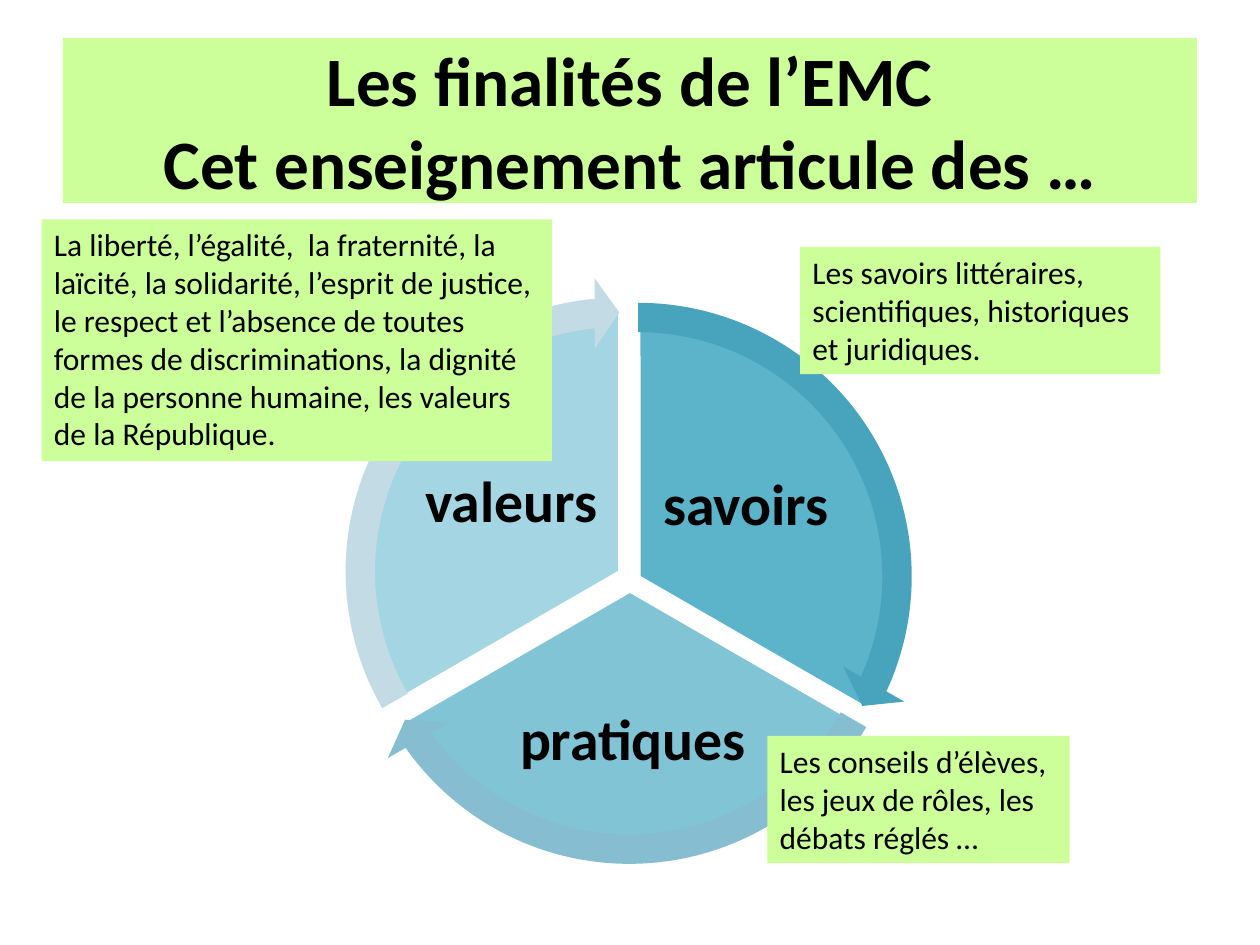
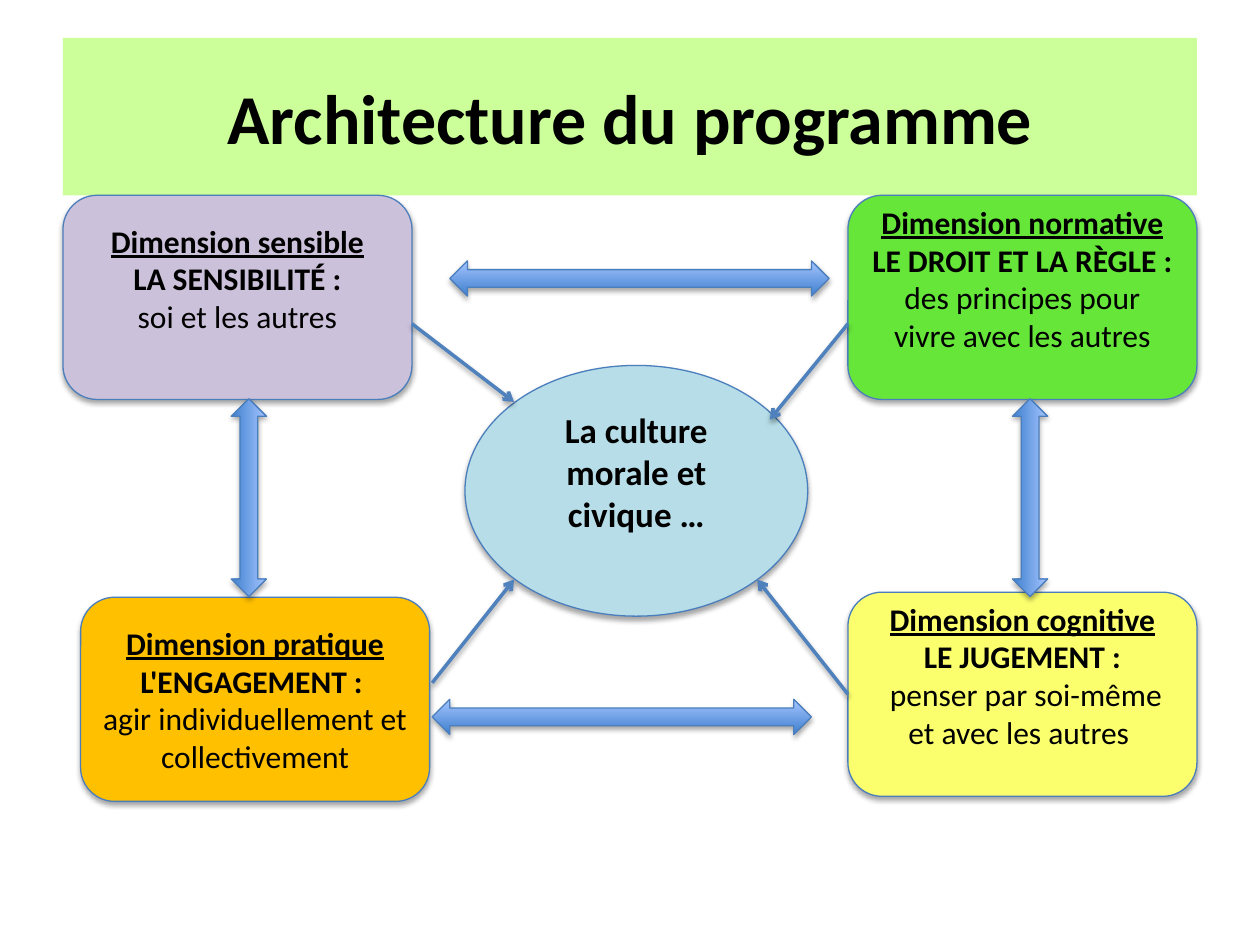
from lxml.etree import SubElement
from pptx import Presentation
from pptx.dml.color import RGBColor
from pptx.enum.shapes import MSO_CONNECTOR, MSO_SHAPE as Preset
from pptx.enum.text import MSO_ANCHOR as Anchor, PP_ALIGN as Align
from pptx.oxml.ns import qn
from pptx.util import Inches, Pt

BLACK = RGBColor(0x00, 0x00, 0x00)
WHITE = RGBColor(0xFF, 0xFF, 0xFF)
LIME = RGBColor(0xCC, 0xFF, 0x99)
TEAL = RGBColor(0x4B, 0xAC, 0xC6)
DEEP_TEAL = RGBColor(0x48, 0xA4, 0xBD)
MID_TEAL = RGBColor(0x86, 0xBD, 0xD0)
PALE_TEAL = RGBColor(0xC2, 0xDB, 0xE5)
LILAC = RGBColor(0xCC, 0xC1, 0xDA)
GREEN = RGBColor(0x67, 0xE6, 0x3A)
ORANGE = RGBColor(0xFF, 0xC0, 0x00)
YELLOW = RGBColor(0xFC, 0xFF, 0x6D)
SKY = RGBColor(0xB7, 0xDE, 0xE8)
OUTLINE = RGBColor(0x4B, 0x7E, 0xBC)
LINK_BLUE = RGBColor(0x4F, 0x81, 0xBD)
ARROW_DARK = RGBColor(0x3F, 0x80, 0xCE)
ARROW_LIGHT = RGBColor(0xA4, 0xC4, 0xFF)
FONT = "Calibri"

prs = Presentation()
prs.slide_width, prs.slide_height = Inches(10), Inches(7.5)
COL = prs.slide_width / 100
ROW = prs.slide_height / 75


def add_block(slide, preset, box, fill=None, outline=None, weight=0.75):
    """Draw a flat preset shape; box is left, top, width, height in grid units."""
    left, top, width, height = box
    block = slide.shapes.add_shape(
        preset, int(left * COL), int(top * ROW), int(width * COL), int(height * ROW))
    block.shadow.inherit = False
    if fill is None:
        block.fill.background()
    else:
        block.fill.solid()
        block.fill.fore_color.rgb = fill
    if outline is None:
        block.line.fill.background()
    else:
        block.line.color.rgb = outline
        block.line.width = Pt(weight)
    return block


def write(block, paragraphs, size, align=Align.CENTER, anchor=Anchor.MIDDLE):
    """Fill a block with paragraphs, each a list of (text, bold, underline) runs."""
    frame = block.text_frame
    frame.word_wrap = True
    frame.vertical_anchor = anchor
    for index, runs in enumerate(paragraphs):
        paragraph = frame.add_paragraph() if index else frame.paragraphs[0]
        paragraph.alignment = align
        for text, bold, underline in runs:
            for number, line in enumerate(text.split("\n")):
                if number:
                    paragraph.add_line_break()
                run = paragraph.add_run()
                run.text = line
                run.font.name, run.font.size = FONT, Pt(size)
                run.font.bold, run.font.underline = bold, underline
                run.font.color.rgb = BLACK
    return frame


# Title bands
slides = []
for title, size, height in [
    ("Les finalités de l’EMC\nCet enseignement articule des …", 39.6, 13.1),
    ("Architecture du programme", 40, 12.5),
]:
    slide = prs.slides.add_slide(prs.slide_layouts[6])
    band = add_block(slide, Preset.RECTANGLE, (5, 3, 90, height), LIME)
    write(band, [[(title, True, False)]], size)
    slides.append(slide)
purposes, programme = slides

# Slide 1: wheel of three sectors
for sector_box, angles, opacity, label, label_box in [
    ((29.9, 24.7, 41.6, 42.2), (162, 18), 90, "savoirs", (51.8, 33.6, 14.8, 12.6)),
    ((29.2, 26.1, 41.6, 41.6), (18, 90), 70, "pratiques", (39.1, 53.1, 22.3, 10.9)),
    ((28.4, 24.6, 41.6, 41.6), (90, 162), 50, "valeurs", (33.2, 33.4, 14.8, 12.4)),
]:
    sector = add_block(purposes, Preset.PIE, sector_box, TEAL, WHITE, 2)
    for index, angle in enumerate(angles):
        sector.adjustments[index] = angle
    colour = sector.element.spPr.find(qn("a:solidFill")).find(qn("a:srgbClr"))
    SubElement(colour, qn("a:alpha"), val=str(opacity * 1000))
    frame = write(add_block(purposes, Preset.RECTANGLE, label_box),
                  [[(label, True, False)]], 33)
    frame.margin_left = frame.margin_right = Inches(0.05)

for left, top, head_angle, start_angle, colour in [
    (27.3, 22.4, 14.73, 161.99, DEEP_TEAL),
    (26.6, 23.5, 86.72, 18, MID_TEAL),
    (25.8, 22, 158.73, 90, PALE_TEAL),
]:
    rim = add_block(purposes, Preset.CIRCULAR_ARROW, (left, top, 46.7, 46.7), colour)
    for index, value in enumerate((0.05, 3.28, head_angle, start_angle, 0.06)):
        rim.adjustments[index] = value

for note_box, note in [
    ((3.3, 17.4, 40.5, 19.2),
     "La liberté, l’égalité,  la fraternité, la laïcité, la solidarité, l’esprit de "
     "justice, le respect et l’absence de toutes formes de discriminations, la dignité "
     "de la personne humaine, les valeurs de la République."),
    ((63.5, 19.6, 28.6, 10.1),
     "Les savoirs littéraires, scientifiques, historiques et juridiques."),
    ((60.9, 58.4, 24, 10.1),
     "Les conseils d’élèves, les jeux de rôles, les débats réglés …"),
]:
    write(add_block(purposes, Preset.RECTANGLE, note_box, LIME),
          [[(note, False, False)]], 18, Align.LEFT, Anchor.TOP)

# Slide 2: four dimensions around a core
LIFT = Inches(0.35)
raised = []
dimensions = []
for left, top, colour, lifted, paragraphs in [
    (5, 15.5, LILAC, True, [
        [("Dimension sensible", True, True)],
        [("LA SENSIBILITÉ :", True, False)],
        [("soi et les autres", False, False)]]),
    (67.3, 15.5, GREEN, True, [
        [("Dimension normative", True, True)],
        [("LE DROIT ET LA RÈGLE : ", True, False),
         ("des principes pour vivre avec les autres", False, False)]]),
    (6.4, 47.4, ORANGE, False, [
        [("Dimension pratique", True, True)],
        [("L'ENGAGEMENT : ", True, False)],
        [("agir individuellement et collectivement", False, False)]]),
    (67.3, 47, YELLOW, True, [
        [("Dimension cognitive", True, True)],
        [("LE JUGEMENT :", True, False)],
        [(" penser par soi-même et avec les autres ", False, False)]]),
]:
    dimension = add_block(programme, Preset.FLOWCHART_ALTERNATE_PROCESS,
                          (left, top, 27.7, 16.2), colour, OUTLINE)
    frame = write(dimension, paragraphs, 18)
    if lifted:
        frame.margin_bottom = LIFT
    dimensions.append(dimension)
raised += dimensions

core = add_block(programme, Preset.OVAL, (36.9, 29, 27.2, 19.9), SKY, OUTLINE)
write(core, [[("La culture morale et civique …", True, False)]], 20).margin_bottom = LIFT
raised.append(core)

links = []
for x1, y1, x2, y2 in [
    (32.7, 25.7, 40.8, 31.9),
    (67.3, 25.7, 61.1, 33.3),
    (34.3, 54.2, 40.8, 46),
    (67.3, 55.1, 60.1, 46),
]:
    link = programme.shapes.add_connector(
        MSO_CONNECTOR.STRAIGHT, int(x1 * COL), int(y1 * ROW), int(x2 * COL), int(y2 * ROW))
    link.line.color.rgb = LINK_BLUE
    link.line.width = Pt(2)
    SubElement(link.line._get_or_add_ln(), qn("a:tailEnd"), type="arrow")
    links.append(link)
links[-1].begin_connect(dimensions[-1], 1)
raised += links

for left, top, length, rotation in [
    (35.7, 20.7, 30.1, 0),
    (73.9, 38.1, 15.7, 90),
    (34.3, 55.5, 30.1, 0),
    (11.9, 38.1, 15.7, 90),
]:
    exchange = add_block(programme, Preset.LEFT_RIGHT_ARROW,
                         (left, top, length, 2.8), ARROW_DARK, OUTLINE)
    exchange.rotation = rotation
    exchange.fill.gradient()
    exchange.fill.gradient_angle = 90
    for stop, colour in zip(exchange.fill.gradient_stops, (ARROW_DARK, ARROW_LIGHT)):
        stop.color.rgb = colour
    raised.append(exchange)

# Soft shadow under everything on slide 2 except the title
for item in raised:
    properties = item.element.spPr
    effects = properties.find(qn("a:effectLst"))
    if effects is None:
        effects = SubElement(properties, qn("a:effectLst"))
    shadow = SubElement(effects, qn("a:outerShdw"), blurRad=str(Pt(3.1)),
                        dist=str(Pt(1.8)), dir="5400000", rotWithShape="0")
    shade = SubElement(shadow, qn("a:srgbClr"), val=str(BLACK))
    SubElement(shade, qn("a:alpha"), val="35000")

prs.save("out.pptx")
